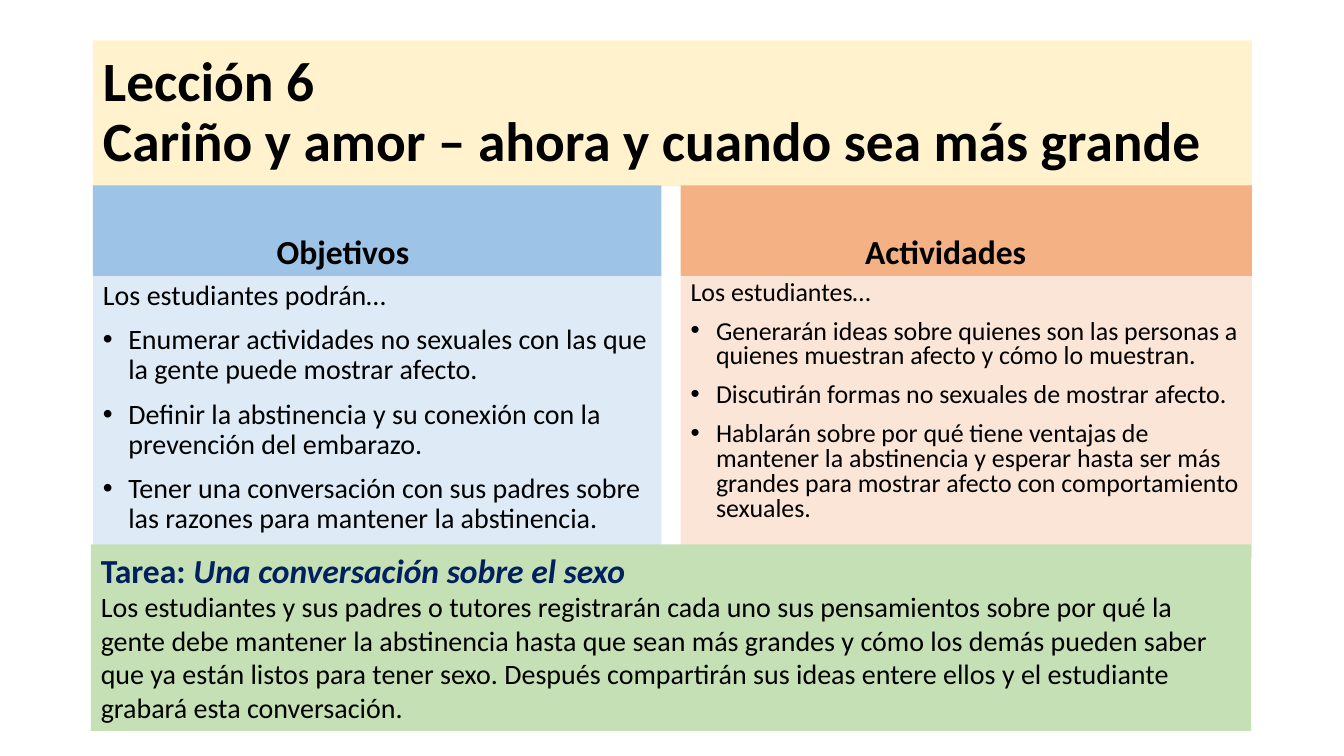
from dataclasses import dataclass

from lxml import etree
from pptx import Presentation
from pptx.dml.color import RGBColor
from pptx.enum.text import MSO_ANCHOR, MSO_AUTO_SIZE, PP_ALIGN
from pptx.oxml.ns import qn
from pptx.util import Cm, Pt

LEFT, CENTER = PP_ALIGN.LEFT, PP_ALIGN.CENTER
TOP, MIDDLE, BOTTOM = MSO_ANCHOR.TOP, MSO_ANCHOR.MIDDLE, MSO_ANCHOR.BOTTOM
NO_FIT, GROW = MSO_AUTO_SIZE.NONE, MSO_AUTO_SIZE.SHAPE_TO_FIT_TEXT

BLACK = RGBColor(0x00, 0x00, 0x00)
NAVY = RGBColor(0x00, 0x20, 0x60)
CREAM = RGBColor(0xFF, 0xF2, 0xCC)
BLUE = RGBColor(0x9D, 0xC3, 0xE6)
PALE_BLUE = RGBColor(0xDE, 0xEB, 0xF7)
ORANGE = RGBColor(0xF4, 0xB1, 0x83)
PALE_ORANGE = RGBColor(0xFB, 0xE5, 0xD6)
GREEN = RGBColor(0xC5, 0xE0, 0xB4)

FONT = "Calibri"
COMPARISON_LAYOUT = 4
MARGIN = Cm(2.34)
HEADING_TOP, HEADING_HEIGHT = Cm(4.67), Cm(2.29)
LIST_TOP, LIST_HEIGHT = HEADING_TOP + HEADING_HEIGHT, Cm(7.09)
BULLET_INDENT = Cm(0.64)


@dataclass(frozen=True)
class Column:
    heading_idx: int
    list_idx: int
    left: int
    width: int
    heading: str
    heading_inset: int
    heading_fill: RGBColor
    list_fill: RGBColor
    size: float
    spacing: float
    intro: str
    items: tuple[str, ...]


COLUMNS = (
    Column(
        1, 2, MARGIN, Cm(14.33), "Objetivos", Cm(1.98), BLUE, PALE_BLUE, 20, 0.9,
        "Los estudiantes podrán…",
        (
            "Enumerar actividades no sexuales con las que la gente puede mostrar afecto.",
            "Definir la abstinencia y su conexión con la prevención del embarazo.",
            "Tener una conversación con sus padres sobre las razones para mantener "
            "la abstinencia.",
        ),
    ),
    Column(
        3, 4, Cm(17.15), Cm(14.4), "Actividades", Cm(1.29), ORANGE, PALE_ORANGE, 18.5, 0.8,
        "Los estudiantes…",
        (
            "Generarán ideas sobre quienes son las personas a quienes muestran afecto "
            "y cómo lo muestran.",
            "Discutirán formas no sexuales de mostrar afecto.",
            "Hablarán sobre por qué tiene ventajas de mantener la abstinencia y esperar "
            "hasta ser más grandes para mostrar afecto con comportamiento sexuales.",
        ),
    ),
)


def prepare(shape, left: int, top: int, width: int, height: int,
            fill: RGBColor, anchor: MSO_ANCHOR):
    shape.left, shape.top, shape.width, shape.height = left, top, width, height
    shape.fill.solid()
    shape.fill.fore_color.rgb = fill
    frame = shape.text_frame
    frame.word_wrap = True
    frame.auto_size = NO_FIT
    frame.vertical_anchor = anchor
    return frame


def format_paragraph(paragraph, size: float, bold: bool = False, color: RGBColor = BLACK,
                     align: PP_ALIGN = LEFT, spacing: float = 1.0, before: float = 0) -> None:
    font = paragraph.font
    font.name, font.size, font.bold = FONT, Pt(size), bold
    font.color.rgb = color
    paragraph.alignment = align
    paragraph.line_spacing = spacing
    paragraph.space_before = Pt(before)


def set_bullet(paragraph, bulleted: bool) -> None:
    properties = paragraph._p.get_or_add_pPr()
    indent = BULLET_INDENT if bulleted else 0
    properties.set("marL", str(indent))
    properties.set("indent", str(-indent))
    bullet = etree.Element(qn("a:buChar" if bulleted else "a:buNone"))
    if bulleted:
        bullet.set("char", "•")
    properties.find(qn("a:defRPr")).addprevious(bullet)


def add_title(slide) -> None:
    frame = prepare(slide.shapes.title, MARGIN, Cm(1.02), Cm(29.21), Cm(3.68), CREAM, MIDDLE)
    paragraph = frame.paragraphs[0]
    paragraph.add_run().text = "Lección 6"
    paragraph.add_line_break()
    paragraph.add_run().text = "Cariño y amor – ahora y cuando sea más grande"
    format_paragraph(paragraph, 39.6, bold=True, spacing=0.9)


def add_column(slide, column: Column) -> None:
    placeholders = {holder.placeholder_format.idx: holder for holder in slide.placeholders}
    heading = prepare(placeholders[column.heading_idx], column.left, HEADING_TOP,
                      column.width, HEADING_HEIGHT, column.heading_fill, BOTTOM)
    heading.margin_right = column.heading_inset
    heading.text = column.heading
    format_paragraph(heading.paragraphs[0], 24, bold=True, align=CENTER)

    body = prepare(placeholders[column.list_idx], column.left, LIST_TOP,
                   column.width, LIST_HEIGHT, column.list_fill, TOP)
    for number, text in enumerate((column.intro, *column.items)):
        paragraph = body.add_paragraph() if number else body.paragraphs[0]
        paragraph.text = text
        format_paragraph(paragraph, column.size, spacing=column.spacing, before=10)
        set_bullet(paragraph, number > 0)


def add_homework(slide) -> None:
    area = Cm(2.29), Cm(13.72), Cm(29.24), Cm(4.7)
    frame = prepare(slide.shapes.add_textbox(*area), *area, GREEN, TOP)
    frame.auto_size = GROW
    heading = frame.paragraphs[0]
    heading.add_run().text = "Tarea: "
    name = heading.add_run()
    name.text = "Una conversación sobre el sexo"
    name.font.italic = True
    format_paragraph(heading, 24, bold=True, color=NAVY)

    description = frame.add_paragraph()
    description.text = (
        "Los estudiantes y sus padres o tutores registrarán cada uno sus pensamientos sobre "
        "por qué la gente debe mantener la abstinencia hasta que sean más grandes y cómo los "
        "demás pueden saber que ya están listos para tener sexo. Después compartirán sus "
        "ideas entere ellos y el estudiante grabará esta conversación."
    )
    format_paragraph(description, 20)


def main() -> None:
    presentation = Presentation()
    presentation.slide_width, presentation.slide_height = Cm(33.87), Cm(19.05)
    slide = presentation.slides.add_slide(presentation.slide_layouts[COMPARISON_LAYOUT])
    add_title(slide)
    for column in COLUMNS:
        add_column(slide, column)
    add_homework(slide)
    presentation.save("out.pptx")


if __name__ == "__main__":
    main()
